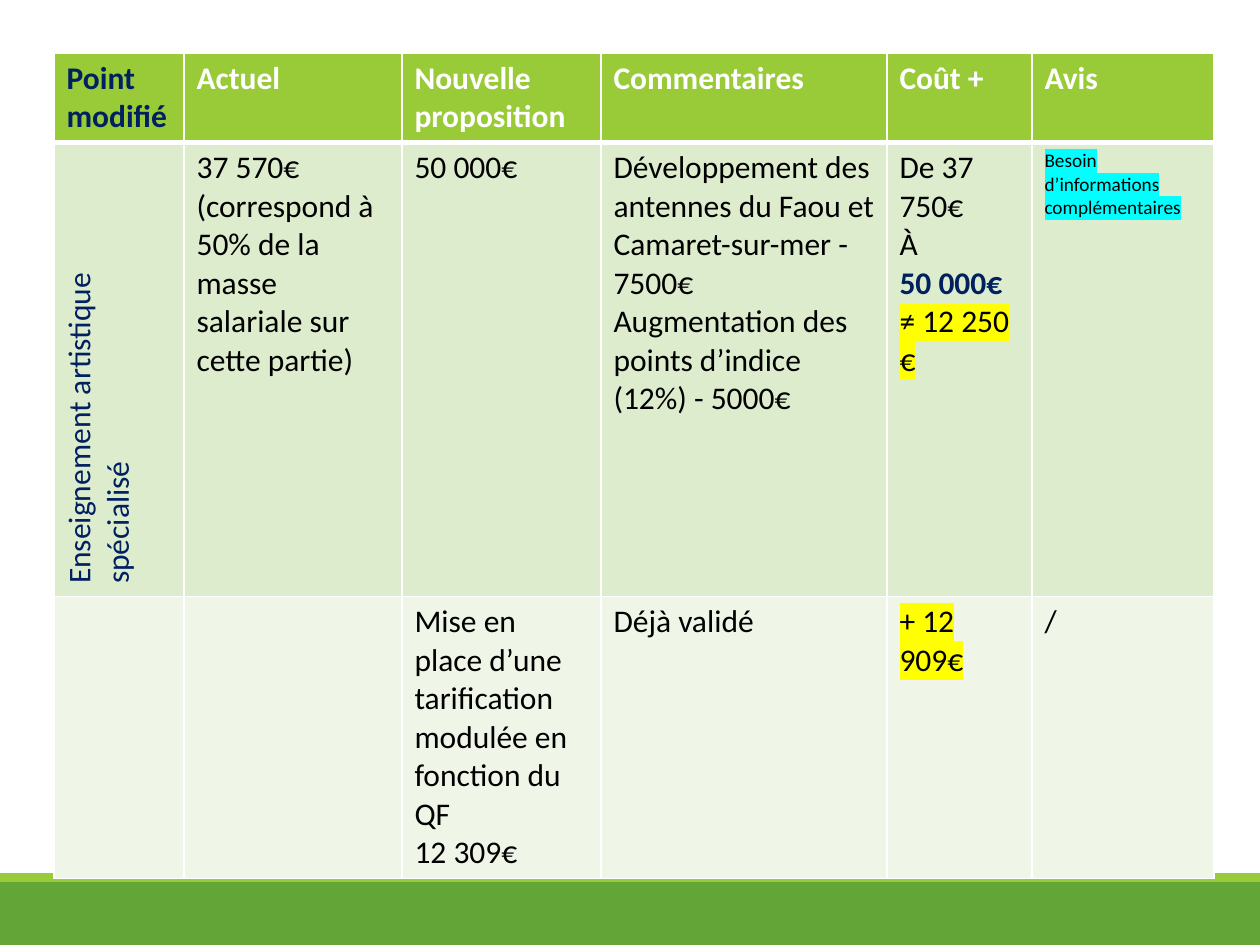
from lxml import etree
from pptx import Presentation
from pptx.dml.color import RGBColor
from pptx.enum.shapes import MSO_SHAPE
from pptx.oxml.ns import qn
from pptx.util import Emu, Pt

RECTANGLE = MSO_SHAPE.RECTANGLE
EMU_PER_PX = 914400 / 126
SLIDE_WIDTH, SLIDE_HEIGHT = 1260, 945
FONT = "Calibri"
COLORS = {
    "white": "FFFFFF",
    "black": "000000",
    "navy": "002060",
    "green": "63A537",
    "lime": "99CB38",
    "band_dark": "DEECCE",
    "band_light": "EFF6E8",
    "yellow": "FFFF00",
    "cyan": "00FFFF",
}

TABLE_LEFT, TABLE_TOP = 54, 53
COLUMN_WIDTHS = [130, 218, 199, 286, 145, 182]
ROW_HEIGHTS = [89, 454, 281]
ROW_FILLS = ["lime", "band_dark", "band_light"]
THIN, THICK = 1, 3

HEADERS = ["Point modifié", "Actuel", "Nouvelle proposition",
           "Commentaires", "Coût +", "Avis"]
# Each cell is a list of paragraphs: (text, style that differs from the default)
BODY = [
    [
        [("Enseignement artistique spécialisé", {"color": "navy"})],
        [("37 570€", {}),
         ("(correspond à 50% de la masse salariale sur cette partie)", {})],
        [("50 000€", {})],
        [("Développement des antennes du Faou et Camaret-sur-mer - 7500€", {}),
         ("Augmentation des points d’indice (12%) - 5000€", {})],
        [("De 37 750€", {}),
         ("À", {}),
         ("50 000€", {"color": "navy", "bold": True}),
         ("≠ 12 250 €", {"highlight": "yellow"})],
        [("Besoin d’informations complémentaires",
          {"size": 11, "highlight": "cyan"})],
    ],
    [
        [],
        [],
        [("Mise en place d’une tarification modulée en fonction du QF", {}),
         ("12 309€", {})],
        [("Déjà validé", {})],
        [("+ 12 909€", {"highlight": "yellow"})],
        [("/", {})],
    ],
]


def px(length):
    return Emu(round(length * EMU_PER_PX))


def rgb(name):
    return RGBColor.from_string(COLORS[name])


def add_band(slide, top, height, color):
    shape = slide.shapes.add_shape(
        RECTANGLE, px(0), px(top), px(SLIDE_WIDTH), px(height))
    shape.shadow.inherit = False
    shape.fill.solid()
    shape.fill.fore_color.rgb = rgb(color)
    shape.line.fill.background()


def add_run(paragraph, text, color="black", size=18, bold=False, highlight=None):
    run = paragraph.add_run()
    run.text = text
    font = run.font
    font.size, font.bold = Pt(size), bold
    font.color.rgb = rgb(color)
    if highlight:
        fill = run._r.get_or_add_rPr().find(qn("a:solidFill"))
        marker = etree.Element(qn("a:highlight"))
        etree.SubElement(marker, qn("a:srgbClr"), val=COLORS[highlight])
        fill.addnext(marker)
    font.name = FONT


def set_borders(cell, top, bottom):
    """Draw white borders; they must precede the fill in the cell properties."""
    widths = {"lnL": THIN, "lnR": THIN, "lnT": top, "lnB": bottom}
    properties = cell._tc.get_or_add_tcPr()
    for index, (side, width) in enumerate(widths.items()):
        line = etree.Element(qn(f"a:{side}"), w=str(Pt(width)))
        fill = etree.SubElement(line, qn("a:solidFill"))
        etree.SubElement(fill, qn("a:srgbClr"), val=COLORS["white"])
        properties.insert(index, line)


def fill_cell(cell, paragraphs, row_index):
    cell.fill.solid()
    cell.fill.fore_color.rgb = rgb(ROW_FILLS[row_index])
    set_borders(cell,
                top=THICK if row_index == 1 else THIN,
                bottom=THICK if row_index == 0 else THIN)
    for index, (text, style) in enumerate(paragraphs):
        frame = cell.text_frame
        paragraph = frame.add_paragraph() if index else frame.paragraphs[0]
        add_run(paragraph, text, **style)


def add_proposal_table(slide):
    header = [[(title, {"color": "white" if index else "navy", "bold": True})]
              for index, title in enumerate(HEADERS)]
    rows = [header] + BODY
    table = slide.shapes.add_table(
        len(rows), len(HEADERS), px(TABLE_LEFT), px(TABLE_TOP),
        px(sum(COLUMN_WIDTHS)), px(sum(ROW_HEIGHTS))).table
    for column, width in zip(table.columns, COLUMN_WIDTHS):
        column.width = px(width)
    for row, height in zip(table.rows, ROW_HEIGHTS):
        row.height = px(height)
    for row_index, row in enumerate(rows):
        for column_index, paragraphs in enumerate(row):
            fill_cell(table.cell(row_index, column_index), paragraphs, row_index)
    table.cell(1, 0)._tc.get_or_add_tcPr().set("vert", "vert270")


def main():
    presentation = Presentation()
    presentation.slide_width = px(SLIDE_WIDTH)
    presentation.slide_height = px(SLIDE_HEIGHT)
    slide = presentation.slides.add_slide(presentation.slide_layouts[6])
    add_band(slide, 882, 63, "green")
    add_band(slide, 873, 9, "lime")
    add_proposal_table(slide)
    presentation.save("out.pptx")


if __name__ == "__main__":
    main()
